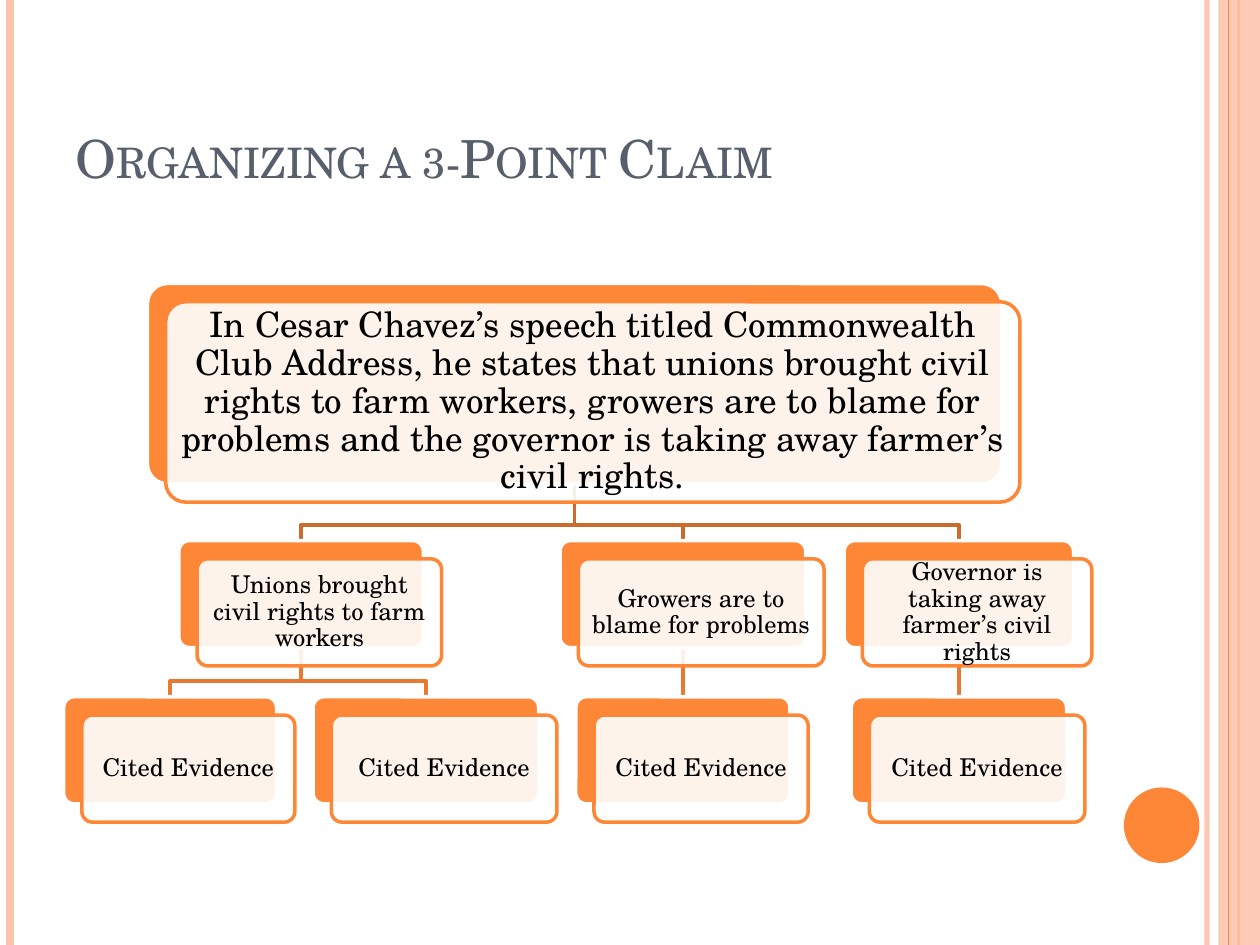
import pptx
import pptx.util
import pptx.dml.color
import pptx.enum.shapes
import pptx.enum.text
import pptx.oxml.ns
import lxml.etree

Inches = pptx.util.Inches
Pt = pptx.util.Pt
Shape = pptx.enum.shapes.MSO_SHAPE
Anchor = pptx.enum.text.MSO_ANCHOR
Align = pptx.enum.text.PP_ALIGN
qn = pptx.oxml.ns.qn

FONT = "TeX Gyre Schola"
ORANGE, PINK, WHITE = "FE8637", "FEC3AE", "FFFFFF"
SHIFT = 0.145  # offset of the front card from the back card

# Tiers of the tree: top, height, text size, text inset
ROOT = (2.25, 1.59, 20, 0.08)
POINT = (4.29, 0.85, 14, 0.06)
PROOF = (5.53, 0.85, 14, 0.06)

# Each node: centre, width, text
CLAIM = (4.56, 6.78, "In Cesar Chavez’s speech titled Commonwealth Club Address, "
         "he states that unions brought civil rights to farm workers, growers are "
         "to blame for problems and the governor is taking away farmer’s civil rights.")
CITED = "Cited Evidence"
BRANCHES = [
    ((2.39, 1.94, "Unions brought civil rights to farm workers"),
     [(1.35, 1.69, CITED), (3.38, 1.79, CITED)]),
    ((5.42, 1.95, "Growers are to blame for problems"), [(5.42, 1.7, CITED)]),
    ((7.61, 1.82, "Governor is taking away farmer’s civil rights"),
     [(7.61, 1.71, CITED)]),
]


def paint(target, color, alpha=100):
    """Give a fill or a line a solid colour, with opacity in percent."""
    fill = getattr(target, "fill", target)
    fill.solid()
    fill.fore_color.rgb = pptx.dml.color.RGBColor.from_string(color)
    if alpha < 100:
        node = fill._xPr.find(qn("a:solidFill"))[0]
        lxml.etree.SubElement(node, qn("a:alpha")).set("val", str(alpha * 1000))


def add_line(slide, start, end, color, width, alpha=100):
    ends = [Inches(n) for n in (*start, *end)]
    line = slide.shapes.add_connector(pptx.enum.shapes.MSO_CONNECTOR.STRAIGHT, *ends)
    paint(line.line, color, alpha)
    line.line.width = Pt(width)
    lxml.etree.SubElement(line._element.spPr, qn("a:effectLst"))


def add_shape(slide, kind, box, color, alpha=100, edge=None):
    shape = slide.shapes.add_shape(kind, *[Inches(n) for n in box])
    shape.shadow.inherit = False
    paint(shape.fill, color, alpha)
    if edge:
        paint(shape.line, edge)
        shape.line.width = Pt(2)
    else:
        shape.line.fill.background()
    return shape


def set_text(shape, text, size, color, inset):
    frame = shape.text_frame
    frame.text = text
    frame.word_wrap = True
    frame.margin_left = frame.margin_right = Inches(inset)
    frame.margin_top = frame.margin_bottom = Inches(inset)
    font = frame.paragraphs[0].runs[0].font
    font.name, font.size = FONT, Pt(size)
    font.color.rgb = pptx.dml.color.RGBColor.from_string(color)
    return frame


def add_card(slide, node, tier):
    """Draw a filled card with a see-through text card in front."""
    mid, width, text = node
    top, height, size, inset = tier
    left = mid - width / 2
    for gap, color, alpha, edge in ((0, ORANGE, 100, WHITE),
                                    (SHIFT, WHITE, 90, ORANGE)):
        box = (left + gap, top + gap, width, height)
        card = add_shape(slide, Shape.ROUNDED_RECTANGLE, box, color, alpha, edge)
        card.adjustments[0] = 0.1
    frame = set_text(card, text, size, "000000", inset)
    frame.vertical_anchor = Anchor.MIDDLE
    frame.paragraphs[0].alignment = Align.CENTER
    frame.paragraphs[0].line_spacing = 0.9


def add_link(slide, head, upper, child, lower, color):
    """Join a node to its child, bending just above the child."""
    x, y = head[0], upper[0] + upper[1]
    end, foot = child[0], lower[0]
    if x == end:
        add_line(slide, (x, y), (end, foot), color, 2)
        return
    bend = foot - 0.125
    form = slide.shapes.build_freeform(Inches(x), Inches(y))
    steps = [(x, bend), (end, bend), (end, foot)]
    form.add_line_segments([(Inches(a), Inches(b)) for a, b in steps], close=False)
    link = form.convert_to_shape()
    link.shadow.inherit = False
    link.fill.background()
    paint(link.line, color)
    link.line.width = Pt(2)


def add_frame(slide):
    def rule(x, color, width, alpha=100):
        add_line(slide, (x, 0), (x, 7.5), color, width, alpha)

    rule(9.58, PINK, 3, 93)
    rule(0.08, PINK, 4.5)
    rule(9.83, ORANGE, 1.5)
    add_shape(slide, Shape.RECTANGLE, (9.67, 0, 0.33, 7.5), PINK, 87)
    rule(9.75, ORANGE, 0.75)
    add_shape(slide, Shape.OVAL, (8.92, 6.25, 0.6, 0.6), ORANGE)


def add_title(slide, text):
    box = slide.shapes.add_textbox(Inches(0.5), Inches(0.3), Inches(8.17), Inches(1.25))
    frame = set_text(box, text, 30, "575F6D", 0.1)
    frame.margin_top = frame.margin_bottom = Inches(0.05)
    frame.vertical_anchor = Anchor.BOTTOM
    frame.paragraphs[0].runs[0].font._element.set("cap", "small")


def main():
    deck = pptx.Presentation()
    deck.slide_width, deck.slide_height = Inches(10), Inches(7.5)
    slide = deck.slides.add_slide(deck.slide_layouts[6])

    # Side bands and title
    add_frame(slide)
    add_title(slide, "Organizing a 3-Point Claim")

    # Links go behind the cards
    for point, proofs in BRANCHES:
        for proof in proofs:
            add_link(slide, point, POINT, proof, PROOF, "E77A32")
        add_link(slide, CLAIM, ROOT, point, POINT, "CB6B2C")

    # Cards
    add_card(slide, CLAIM, ROOT)
    for point, proofs in BRANCHES:
        add_card(slide, point, POINT)
        for proof in proofs:
            add_card(slide, proof, PROOF)

    deck.save("out.pptx")


if __name__ == "__main__":
    main()
